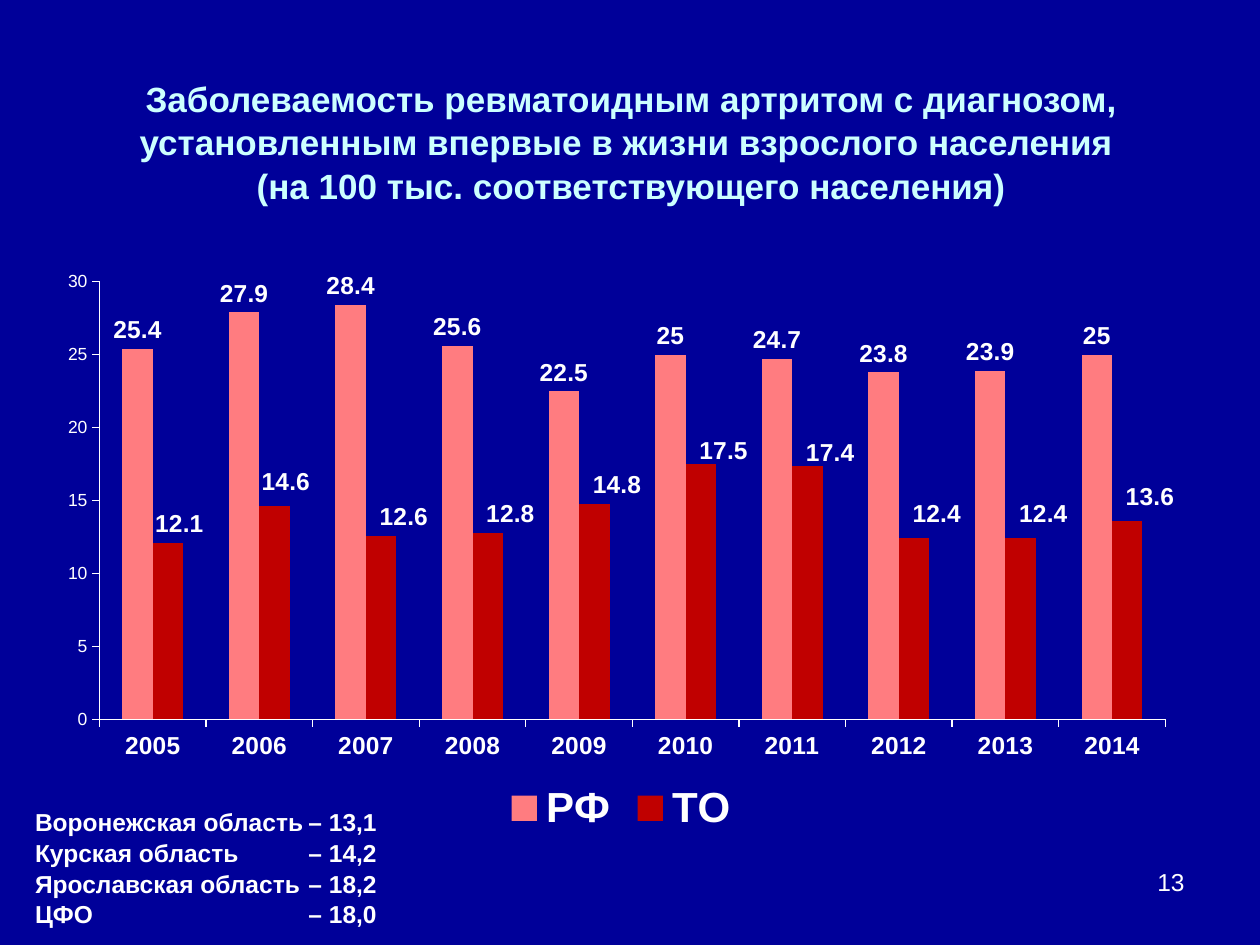
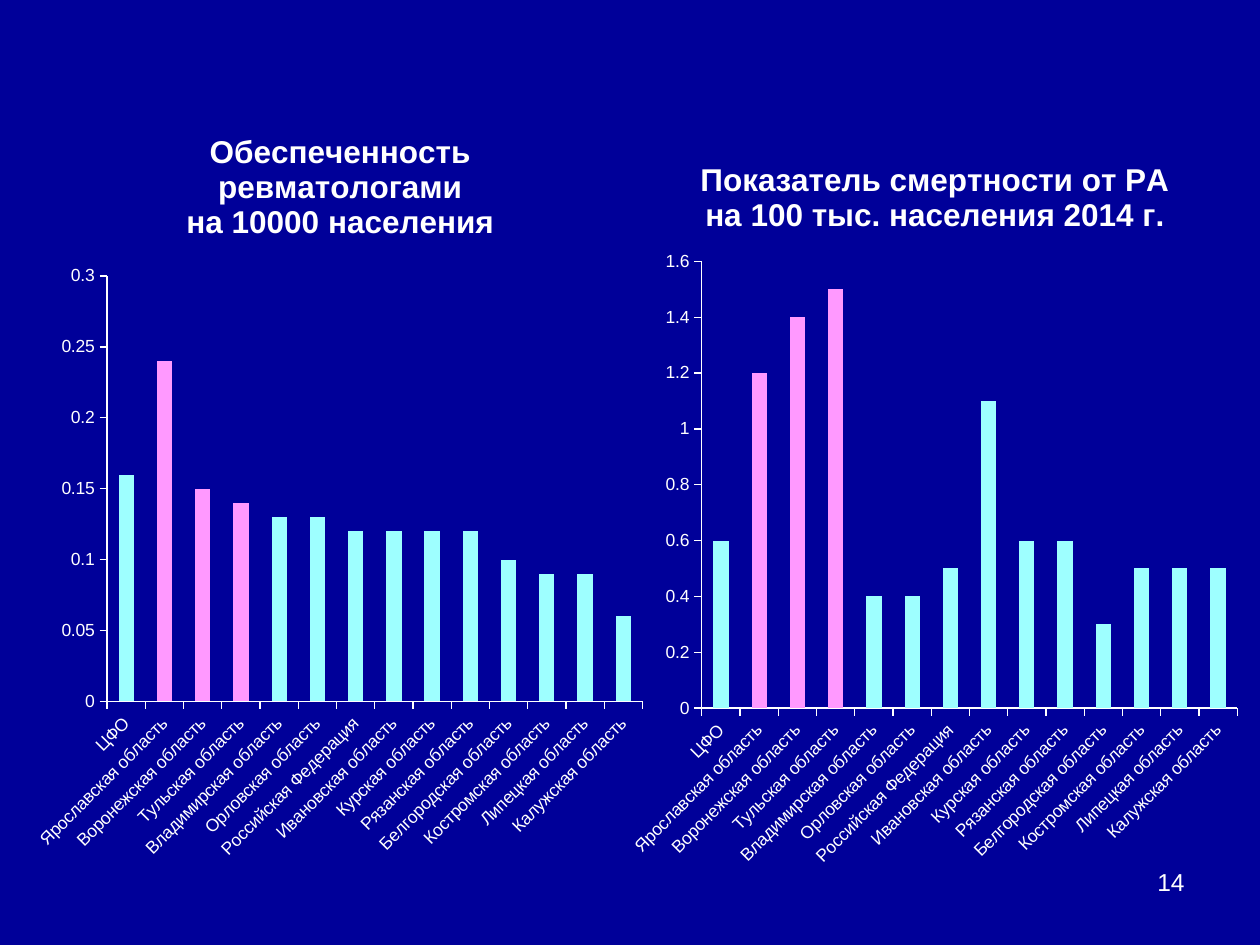
import pptx
import pptx.chart.data
import pptx.dml.color
import pptx.enum.chart
import pptx.enum.text
import pptx.oxml
import pptx.util

Inches = pptx.util.Inches
Pt = pptx.util.Pt
ALIGN = pptx.enum.text.PP_ALIGN
LABEL = pptx.enum.chart.XL_LABEL_POSITION

FONT = "Arial"
NAVY, WHITE, ICE = "000099", "FFFFFF", "CCFFFF"
SALMON, RED, AQUA, PINK = "FF7C80", "C00000", "9EFFFF", "FF99FF"
CHART_NS = 'xmlns:c="http://schemas.openxmlformats.org/drawingml/2006/chart"'
DRAWING_NS = 'xmlns:a="http://schemas.openxmlformats.org/drawingml/2006/main"'
PLOT_LAYOUT = (
    f'<c:layout {CHART_NS}><c:manualLayout><c:layoutTarget val="inner"/>'
    '<c:xMode val="edge"/><c:yMode val="edge"/><c:x val="{}"/><c:y val="{}"/>'
    '<c:w val="{}"/><c:h val="{}"/></c:manualLayout></c:layout>'
)
LABEL_LAYOUT = (
    f'<c:layout {CHART_NS}><c:manualLayout>'
    '<c:x val="{}"/><c:y val="{}"/></c:manualLayout></c:layout>'
)


def style(font, size, color=WHITE, bold=False):
    font.name = FONT
    font.size = Pt(size)
    font.bold = bold
    font.color.rgb = pptx.dml.color.RGBColor.from_string(color)


def write(frame, text, size, color=WHITE, bold=False, align=ALIGN.LEFT, spacing=None, tab=None):
    frame.word_wrap = True
    frame.text = text
    for para in frame.paragraphs:
        para.alignment = align
        if spacing:
            para.line_spacing = spacing
        if tab:
            para._p.get_or_add_pPr().append(pptx.oxml.parse_xml(
                f'<a:tabLst {DRAWING_NS}><a:tab pos="{Inches(tab)}" algn="l"/></a:tabLst>'))
        for span in para.runs:
            style(span.font, size, color, bold)


deck = pptx.Presentation()
deck.slide_width, deck.slide_height = Inches(10), Inches(7.5)
backdrop = deck.slide_master.background.fill
backdrop.solid()
backdrop.fore_color.rgb = pptx.dml.color.RGBColor.from_string(NAVY)

incidence_page = deck.slides.add_slide(deck.slide_layouts[5])
regions_page = deck.slides.add_slide(deck.slide_layouts[6])

for number, page in enumerate(deck.slides, 13):
    box = page.shapes.add_textbox(Inches(7.17), Inches(6.83), Inches(2.33), Inches(0.52))
    write(box.text_frame, str(number), 14, align=ALIGN.RIGHT)

title = incidence_page.shapes.title
title.left, title.top = Inches(0.51), Inches(0.6)
title.width, title.height = Inches(9), Inches(1.25)
title.text_frame.vertical_anchor = pptx.enum.text.MSO_ANCHOR.TOP
title.text_frame.margin_top = 0
write(
    title.text_frame,
    "Заболеваемость ревматоидным артритом с диагнозом, "
    "установленным впервые в жизни взрослого населения \v"
    "(на 100 тыс. соответствующего населения)",
    20, ICE, bold=True, align=ALIGN.CENTER, spacing=1.04)

years = [str(year) for year in range(2005, 2015)]
regions = [
    "ЦФО", "Ярославская область", "Воронежская область", "Тульская область",
    "Владимирская область", "Орловская область", "Российская Федерация",
    "Ивановская область", "Курская область", "Рязанская область",
    "Белгородская область", "Костромская область", "Липецкая область",
    "Калужская область",
]
incidence = {
    "РФ": [25.4, 27.9, 28.4, 25.6, 22.5, 25, 24.7, 23.8, 23.9, 25],
    "ТО": [12.1, 14.6, 12.6, 12.8, 14.8, 17.5, 17.4, 12.4, 12.4, 13.6],
}
mortality = {"Series 1": [0.6, 1.2, 1.4, 1.5, 0.4, 0.4, 0.5, 1.1, 0.6, 0.6, 0.3, 0.5, 0.5, 0.5]}
staffing = {"Series 1": [0.16, 0.24, 0.15, 0.14, 0.13, 0.13, 0.12, 0.12, 0.12, 0.12, 0.1, 0.09, 0.09, 0.06]}

chart_plans = [
    (incidence_page, (0.43, 2.1, 9, 4.57), None, years, incidence,
     (SALMON, RED), 30, 5, (0.04, 0.03, 0.94, 0.76)),
    (regions_page, (4.92, 1.07, 5, 5.91),
     "Показатель смертности от РА\nна 100 тыс. населения 2014 г.",
     regions, mortality, (AQUA,), 1.6, 0.2, (0.13, 0.17, 0.85, 0.6)),
    (regions_page, (0.2, 0.84, 5, 6.14),
     "Обеспеченность\nревматологами\nна 10000 населения",
     regions, staffing, (AQUA,), 0.3, 0.05, (0.13, 0.22, 0.85, 0.55)),
]

charts = []
for page, place, heading, categories, table, colors, top, step, plot_place in chart_plans:
    data = pptx.chart.data.CategoryChartData()
    data.categories = categories
    for name, values in table.items():
        data.add_series(name, values)
    chart = page.shapes.add_chart(
        pptx.enum.chart.XL_CHART_TYPE.COLUMN_CLUSTERED, *map(Inches, place), data).chart
    charts.append(chart)
    style(chart.font, 10)
    chart.has_legend = False
    chart.has_title = heading is not None
    if heading:
        write(chart.chart_title.text_frame, heading, 18, bold=True, align=ALIGN.CENTER)
        chart.chart_title.include_in_layout = False

    chart.value_axis.has_major_gridlines = False
    chart.value_axis.minimum_scale = 0
    chart.value_axis.maximum_scale = top
    chart.value_axis.major_unit = step
    for axis in (chart.category_axis, chart.value_axis):
        axis.major_tick_mark = pptx.enum.chart.XL_TICK_MARK.OUTSIDE
        axis.format.line.width = Pt(0.75)
        axis.format.line.color.rgb = pptx.dml.color.RGBColor.from_string(WHITE)
        style(axis.tick_labels.font, 10)

    plot = chart.plots[0]
    plot.gap_width = 150
    plot.vary_by_categories = False
    for series, color in zip(plot.series, colors):
        highlights = [series.points[index] for index in (1, 2, 3)] if heading else []
        for part, shade in [(series, color)] + [(point, PINK) for point in highlights]:
            part.format.fill.solid()
            part.format.fill.fore_color.rgb = pptx.dml.color.RGBColor.from_string(shade)
        series.invert_if_negative = False

    area = chart._chartSpace.chart.plotArea
    for layout in area.xpath("c:layout"):
        area.remove(layout)
    area.insert(0, pptx.oxml.parse_xml(PLOT_LAYOUT.format(*plot_place)))

incidence_chart, *region_charts = charts
for chart in region_charts:
    chart.category_axis._element.xpath("c:txPr/a:bodyPr")[0].set("rot", "-2700000")

style(incidence_chart.category_axis.tick_labels.font, 14, bold=True)
incidence_chart.has_legend = True
incidence_chart.legend.position = pptx.enum.chart.XL_LEGEND_POSITION.BOTTOM
incidence_chart.legend.include_in_layout = False
style(incidence_chart.legend.font, 24, bold=True)

for series in incidence_chart.plots[0].series:
    series.data_labels.show_value = True
    series.data_labels.position = LABEL.OUTSIDE_END
    style(series.data_labels.font, 14, bold=True)

regional_series = incidence_chart.plots[0].series[1]
label_shifts = [
    (0.01, 0), (0.01, -0.01), (0.02, 0), (0.02, 0), (0.02, 0),
    (0.02, 0.01), (0.02, 0.01), (0.02, -0.01), (0.02, -0.01), (0.02, -0.01),
]
for index in range(len(label_shifts)):
    label = regional_series.points[index].data_label
    label.position = LABEL.OUTSIDE_END
    style(label.font, 14, bold=True)
for node, shift in zip(regional_series._element.xpath("c:dLbls/c:dLbl"), label_shifts):
    node.insert(1, pptx.oxml.parse_xml(LABEL_LAYOUT.format(*shift)))

comparison = incidence_page.shapes.add_textbox(Inches(0.18), Inches(6.35), Inches(3.24), Inches(1.04))
write(
    comparison.text_frame,
    "Воронежская область\t– 13,1\nКурская область\t– 14,2\n"
    "Ярославская область\t– 18,2\nЦФО\t– 18,0",
    14, bold=True, spacing=1.04, tab=2.17)

deck.save("out.pptx")
